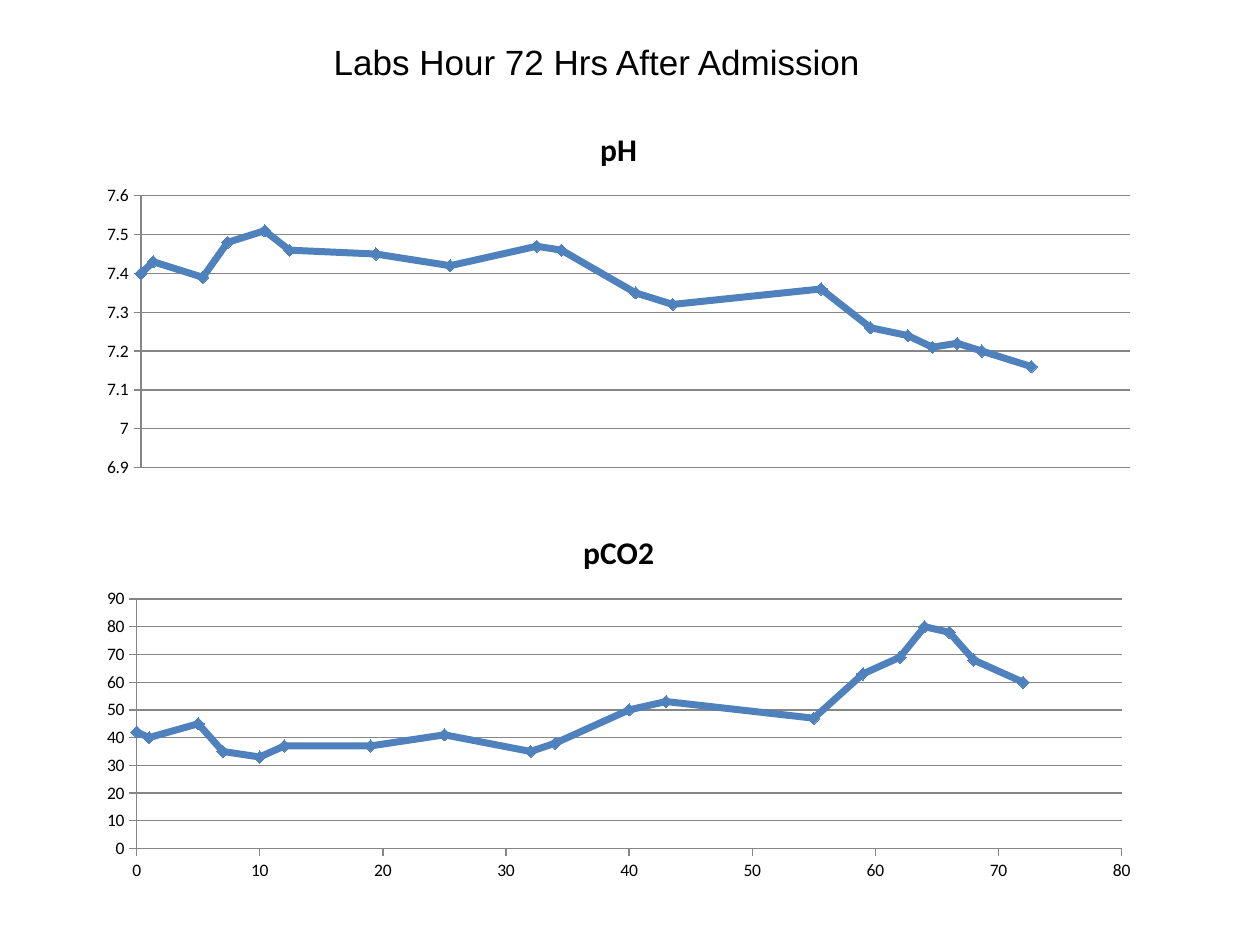
"""Build a slide with two smooth scatter charts of lab values over time."""
from pptx import Presentation
from pptx.chart.data import XyChartData
from pptx.dml.color import RGBColor
from pptx.enum.chart import XL_CHART_TYPE, XL_MARKER_STYLE, XL_TICK_MARK
from pptx.util import Inches, Pt

SMOOTH = XL_CHART_TYPE.XY_SCATTER_SMOOTH
DIAMOND = XL_MARKER_STYLE.DIAMOND
OUTSIDE, NO_TICK = XL_TICK_MARK.OUTSIDE, XL_TICK_MARK.NONE

COLORS = {"text": "000000", "axis": "868686", "series": "4F81BD"}
HEADING = "Labs Hour 72 Hrs After Admission"
HOURS = [0, 1, 5, 7, 10, 12, 19, 25, 32, 34, 40, 43, 55, 59, 62, 64, 66, 68, 72]
LABS = [
    {"name": "pCO2", "top": 4.05, "hours_shown": True, "low": 0, "high": 90, "step": 10,
     "values": [42, 40, 45, 35, 33, 37, 37, 41, 35, 38, 50, 53, 47, 63, 69, 80, 78, 68, 60]},
    {"name": "pH", "top": 0.85, "hours_shown": False, "low": 6.9, "high": 7.6, "step": 0.1,
     "values": [7.4, 7.43, 7.39, 7.48, 7.51, 7.46, 7.45, 7.42, 7.47, 7.46,
                7.35, 7.32, 7.36, 7.26, 7.24, 7.21, 7.22, 7.2, 7.16]},
]


def color(name):
    return RGBColor.from_string(COLORS[name])


def set_font(font, **values):
    for key, value in values.items():
        setattr(font, key, value)
    font.color.rgb = color("text")


def set_line(line, name, width):
    line.color.rgb = color(name)
    line.width = Pt(width)


def format_axis(axis, low, high, step):
    scale = {"minimum_scale": low, "maximum_scale": high, "major_unit": step,
             "major_tick_mark": OUTSIDE, "minor_tick_mark": NO_TICK,
             "has_major_gridlines": False}
    for key, value in scale.items():
        setattr(axis, key, value)
    axis.tick_labels.number_format = "General"
    axis.tick_labels.number_format_is_linked = False
    set_line(axis.format.line, "axis", 0.75)


def add_lab_chart(page, lab):
    data = XyChartData()
    points = data.add_series(lab["name"])
    for hour, value in zip(HOURS, lab["values"]):
        points.add_data_point(hour, value)
    frame = page.shapes.add_chart(SMOOTH, Inches(0.68), Inches(lab["top"]),
                                  Inches(8.46), Inches(3), data)
    chart = frame.chart
    chart.has_legend = False
    set_font(chart.font, name="Calibri", size=Pt(10))
    chart.has_title = True
    title = chart.chart_title.text_frame
    title.text = lab["name"]
    set_font(title.paragraphs[0].runs[0].font, name="Calibri", size=Pt(18), bold=True)

    format_axis(chart.category_axis, 0, 80, 10)
    format_axis(chart.value_axis, lab["low"], lab["high"], lab["step"])
    chart.category_axis.visible = lab["hours_shown"]
    chart.value_axis.has_major_gridlines = True
    set_line(chart.value_axis.major_gridlines.format.line, "axis", 0.75)

    plot = chart.plots[0]
    plot.vary_by_categories = False
    series = plot.series[0]
    series.smooth = True
    set_line(series.format.line, "series", 4)
    series.marker.style = DIAMOND
    series.marker.size = 7
    series.marker.format.fill.solid()
    series.marker.format.fill.fore_color.rgb = color("series")
    set_line(series.marker.format.line, "series", 0.75)


def main():
    deck = Presentation()
    deck.slide_width, deck.slide_height = Inches(10), Inches(7.5)
    page = deck.slides.add_slide(deck.slide_layouts[6])
    box = page.shapes.add_textbox(Inches(2.55), Inches(0.27), Inches(5.04), Inches(0.44))
    box.text_frame.word_wrap = True
    span = box.text_frame.paragraphs[0].add_run()
    span.text = HEADING
    set_font(span.font, name="Arial", size=Pt(20))
    for lab in LABS:
        add_lab_chart(page, lab)
    deck.save("out.pptx")


if __name__ == "__main__":
    main()
